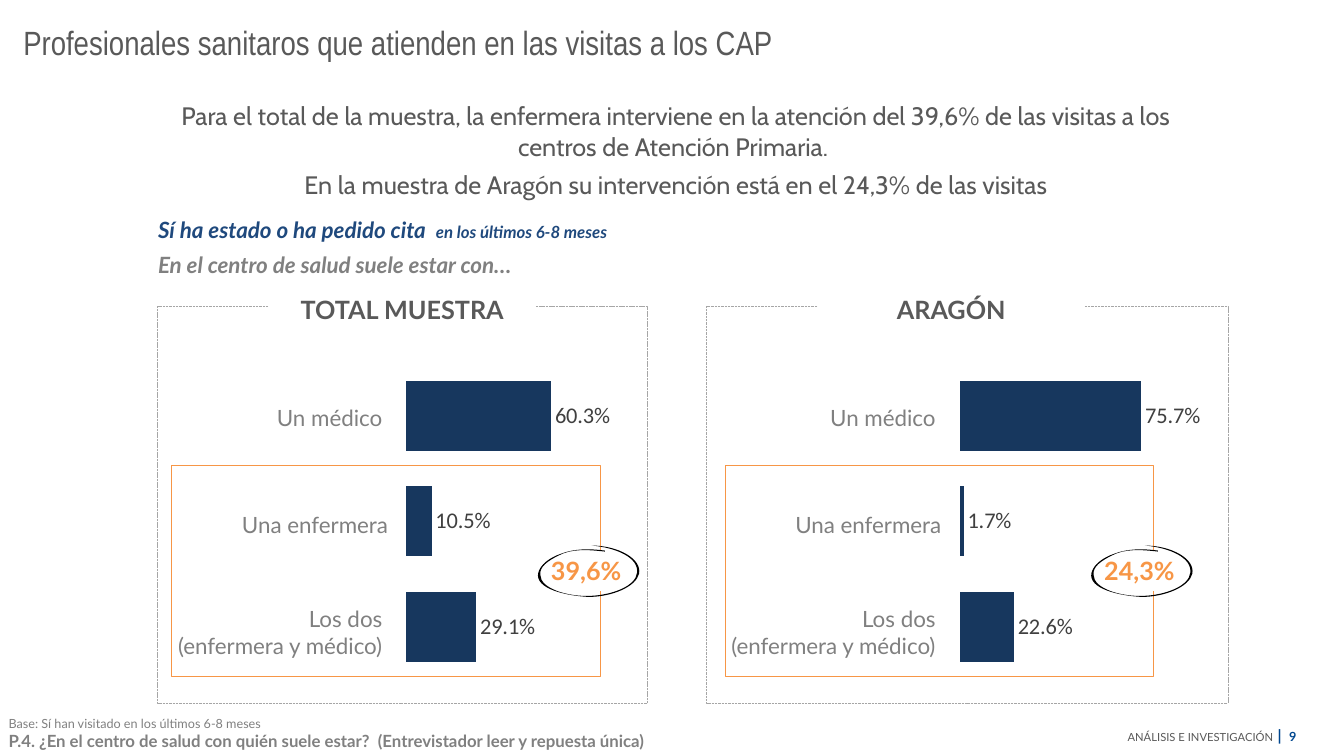
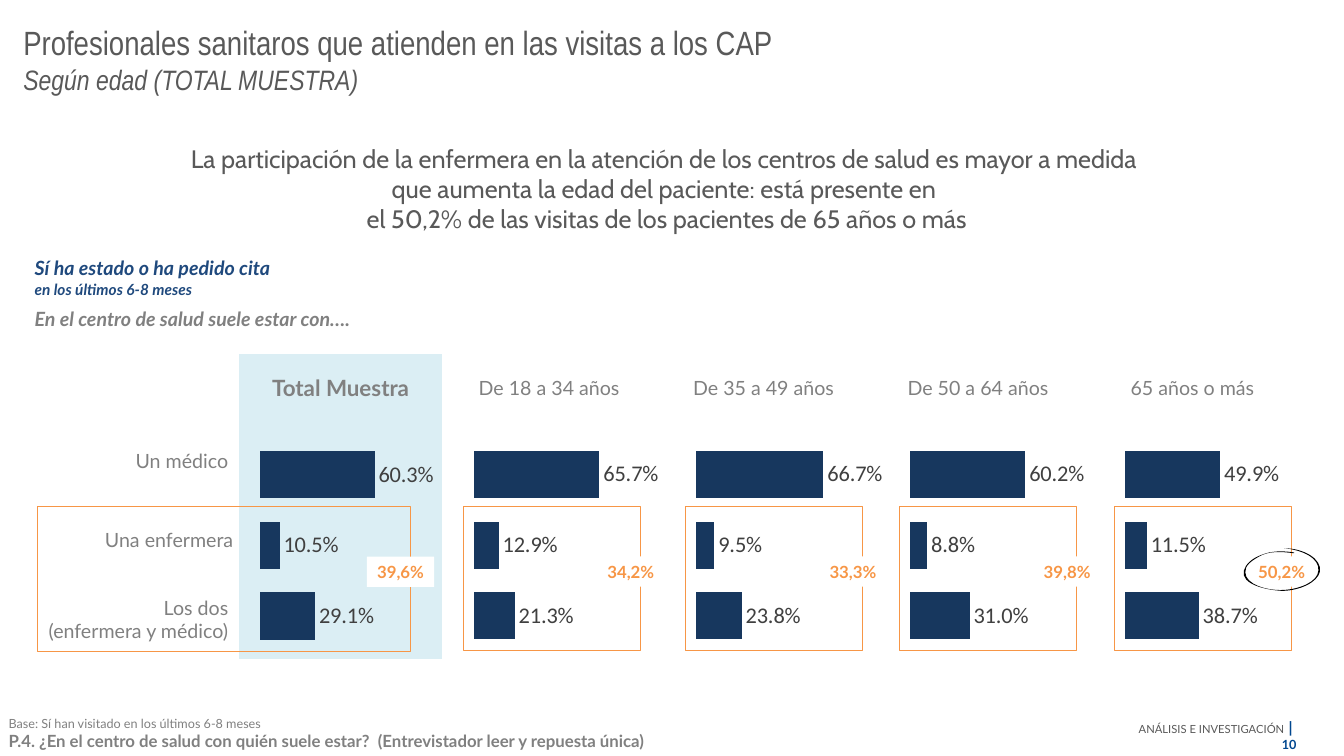
from dataclasses import dataclass, replace

from lxml import etree
from pptx import Presentation
from pptx import util as u
from pptx.chart import data as chart_data
from pptx.dml import color as dml_color
from pptx.enum import chart as chart_enum
from pptx.enum import dml, shapes, text
from pptx.oxml import ns

Pt = u.Pt
LEFT, CENTER, RIGHT = text.PP_ALIGN.LEFT, text.PP_ALIGN.CENTER, text.PP_ALIGN.RIGHT
TOP, MIDDLE, BOTTOM = text.MSO_ANCHOR.TOP, text.MSO_ANCHOR.MIDDLE, text.MSO_ANCHOR.BOTTOM


@dataclass(frozen=True)
class Style:
    """Character formatting of a run."""
    size: float
    color: str
    font: str = "Lato"
    bold: bool = False
    italic: bool = False


class Theme:
    """Colours and type styles shared by the slides."""
    white, black, bar, band = "FFFFFF", "000000", "17375E", "DBEEF4"
    accent, panel_line = "F79646", "A6A6A6"
    no_grid = "{2D5ABB26-0587-4C30-8999-92F81FD0307C}"
    title = Style(24, "595959", "Arial Narrow")
    subtitle = replace(title, size=20, italic=True)
    lead = Style(18, "595959", "Cabin")
    heading = Style(18, "595959", bold=True)
    label = Style(16, "808080")
    small_label = replace(label, size=14)
    column_total = replace(label, bold=True)
    filter = Style(16, "1F497D", bold=True, italic=True)
    question = replace(filter, color="808080")
    tag = Style(18, accent, bold=True)
    base = Style(9, "808080")
    source = Style(12, "808080", bold=True)
    department = Style(8, "595959")
    gap = replace(department, size=11)
    divider = Style(11, "00478F", bold=True)
    number = replace(divider, size=9)
    value = Style(16, "404040", "Calibri")


TITLE = "Profesionales sanitaros que atienden en las visitas a los CAP"
ROW_LABELS = ("Un médico ", "Una enfermera", "Los dos \v(enfermera y médico) ")
RING_START = (70, 6)
RING_CURVES = (
    (55, 4, 40, 4, 27, 9), (15, 13, 6, 20, 4, 28), (0, 44, 32, 51, 54, 52),
    (77, 52, 101, 42, 104, 29), (107, 14, 83, 1, 57, 1), (57, 0, 57, 1, 57, 1),
    (81, 3, 104, 13, 102, 28), (101, 41, 78, 50, 56, 51), (34, 52, 6, 44, 6, 30),
    (5, 22, 14, 16, 24, 11), (37, 4, 53, 5, 70, 7), (70, 7, 70, 6, 70, 6),
)


def rgb(value):
    """Turn a hex string into a colour."""
    return dml_color.RGBColor.from_string(value)


def points(box):
    """Convert a box in points to lengths."""
    return [Pt(length) for length in box]


def style_font(font, style):
    """Apply a style to a font."""
    font.name, font.size = style.font, Pt(style.size)
    font.bold, font.italic = style.bold, style.italic
    font.color.rgb = rgb(style.color)


def write(frame, paragraphs, align=LEFT, anchor=TOP, after=0, insets=(7.2, 3.6, 7.2, 3.6)):
    """Fill a text frame with paragraphs made of (text, style) pieces."""
    frame.word_wrap = True
    frame.auto_size = text.MSO_AUTO_SIZE.NONE
    frame.vertical_anchor = anchor
    frame.margin_left, frame.margin_top, frame.margin_right, frame.margin_bottom = points(insets)
    for index, pieces in enumerate(paragraphs):
        paragraph = frame.add_paragraph() if index else frame.paragraphs[0]
        fill_paragraph(paragraph, pieces)
        paragraph.alignment = align
        paragraph.space_after = Pt(after)


def fill_paragraph(paragraph, pieces):
    """Add styled runs, turning vertical tabs into line breaks."""
    for words, style in pieces:
        for index, line in enumerate(words.split("\v")):
            if index:
                paragraph.add_line_break()
                etree.SubElement(paragraph._p[-1], ns.qn("a:rPr"), sz=str(style.size * 100))
            if line:
                run = paragraph.add_run()
                run.text = line
                style_font(run.font, style)


def add_box(slide, box, fill=None, line=None, width=0.5, dash=None):
    """Draw a rectangle with an optional fill and outline."""
    shape = slide.shapes.add_shape(shapes.MSO_SHAPE.RECTANGLE, *points(box))
    shape.shadow.inherit = False
    paint(shape.fill, fill)
    if line:
        shape.line.color.rgb = rgb(line)
        shape.line.width = Pt(width)
        shape.line.dash_style = dash
    else:
        shape.line.fill.background()
    return shape


def paint(fill, color):
    """Set a solid fill, or none."""
    if color:
        fill.solid()
        fill.fore_color.rgb = rgb(color)
    else:
        fill.background()


def add_block(slide, box, paragraphs, **layout):
    """Place text on a white rectangle."""
    write(add_box(slide, box, Theme.white).text_frame, paragraphs, **layout)


def add_text(slide, box, paragraphs, **layout):
    """Place a text box."""
    write(slide.shapes.add_textbox(*points(box)).text_frame, paragraphs, **layout)


def add_ring(slide, box):
    """Draw a hand-made ring of cubic curves that fills the box."""
    left, top, width, height = box

    def place(x, y):
        return Pt(left + x * width / 106), Pt(top + y * height / 52)

    builder = slide.shapes.build_freeform(*place(*RING_START))
    builder.add_line_segments([place(*curve[4:]) for curve in RING_CURVES], close=True)
    shape = builder.convert_to_shape()
    for line, curve in zip(list(shape.element.iter(ns.qn("a:lnTo"))), RING_CURVES):
        line.tag = ns.qn("a:cubicBezTo")
        for index in (0, 2):
            x, y = place(*curve[index:index + 2])
            control = etree.Element(ns.qn("a:pt"), x=str(x - shape.left), y=str(y - shape.top))
            line.insert(index // 2, control)
    shape.shadow.inherit = False
    paint(shape.fill, Theme.black)
    shape.line.fill.background()


def add_table(slide, box, widths, heights):
    """Add a table without style or grid."""
    graphic = slide.shapes.add_table(len(heights), len(widths), *points(box))
    for style_id in graphic.element.iter(ns.qn("a:tableStyleId")):
        style_id.text = Theme.no_grid
    table = graphic.table
    table.first_row = table.horz_banding = False
    for column, width in zip(table.columns, widths):
        column.width = Pt(width)
    for row, height in zip(table.rows, heights):
        row.height = Pt(height)
    for cell in table.iter_cells():
        paint(cell.fill, None)
    return table


def write_cell(cell, words, style, align, right=0.7):
    """Write one table cell, centred vertically."""
    cell.margin_left, cell.margin_top, cell.margin_right, cell.margin_bottom = points((0.7, 0.7, right, 0))
    cell.vertical_anchor = MIDDLE
    paragraph = cell.text_frame.paragraphs[0]
    fill_paragraph(paragraph, [(words, style)])
    paragraph.alignment = align


def add_bars(slide, box, values, plot_width, plot_height):
    """Add a bar chart whose plot covers the given fractions of the box."""
    data = chart_data.CategoryChartData()
    data.categories = ["1", "2", "3"]
    data.add_series("Series 1", values)
    chart = slide.shapes.add_chart(chart_enum.XL_CHART_TYPE.BAR_CLUSTERED, *points(box), data).chart
    chart.has_legend = chart.has_title = False
    style_font(chart.font, replace(Theme.value, size=11))
    chart.category_axis.reverse_order = True
    chart.value_axis.minimum_scale, chart.value_axis.maximum_scale = 0, 100
    chart.value_axis.has_major_gridlines = False
    chart.category_axis.visible = chart.value_axis.visible = False
    plot = chart.plots[0]
    plot.gap_width, plot.vary_by_categories = 50, False
    paint(plot.series[0].format.fill, Theme.bar)
    plot.has_data_labels = True
    labels = plot.data_labels
    labels.show_value = True
    labels.number_format, labels.number_format_is_linked = "0.0\\%", False
    labels.position = chart_enum.XL_LABEL_POSITION.OUTSIDE_END
    style_font(labels.font, Theme.value)
    set_plot_layout(chart, plot_width, plot_height)


def set_plot_layout(chart, width, height):
    """Fix the inner plot area of a chart."""
    area = chart._chartSpace.find(".//" + ns.qn("c:plotArea"))
    for old in area.findall(ns.qn("c:layout")):
        area.remove(old)
    layout = etree.Element(ns.qn("c:layout"))
    manual = etree.SubElement(layout, ns.qn("c:manualLayout"))
    settings = (("layoutTarget", "inner"), ("xMode", "edge"), ("yMode", "edge"),
                ("x", 0.001), ("y", 0.004), ("w", width), ("h", height))
    for tag, value in settings:
        etree.SubElement(manual, ns.qn("c:" + tag), val=str(value))
    area.insert(0, layout)


def add_base(presentation, number, title_pieces, title_height):
    """Start a slide with its title, source note and footer."""
    slide = presentation.slides.add_slide(presentation.slide_layouts[5])
    title = slide.shapes.title
    title.left, title.top, title.width, title.height = points((9.4, 12.2, 822, title_height))
    write(title.text_frame, [title_pieces])
    add_text(slide, (0, 508, 662, 31.7), [
        [("Base: Sí han visitado en los últimos 6-8 meses", Theme.base)],
        [("P.4. ¿En el centro de salud con quién suele estar?  (Entrevistador leer y repuesta única)",
          Theme.source)],
    ], anchor=BOTTOM, insets=(6.2, 3.1, 6.2, 3.1))
    add_text(slide, (795.6, 514.8, 137.5, 20.9), [[
        ("ANÁLISIS E INVESTIGACIÓN", Theme.department), (" ", Theme.gap),
        ("|  ", Theme.divider), (str(number), Theme.number),
    ]], align=RIGHT, anchor=MIDDLE)
    return slide


def add_panel(slide, box, labels_left, heading, values, nurse_share):
    """Draw a dashed panel with row labels, bars and the nurse share."""
    left, top, _, _ = box
    add_box(slide, box, line=Theme.panel_line, width=0.25, dash=dml.MSO_LINE.SQUARE_DOT)
    add_block(slide, (left + 79.3, top - 16.8, 191, 38), [[(heading, Theme.heading)]],
              align=CENTER, anchor=MIDDLE, after=6)
    table = add_table(slide, (labels_left, top + 41, 193, 229.5), [193], [76.5] * 3)
    for row, label in enumerate(ROW_LABELS):
        write_cell(table.cell(row, 0), label, Theme.label, RIGHT)
    add_bars(slide, (labels_left + 205.1, top + 39.8, 236.9, 231.8), values, 0.724, 0.973)
    add_box(slide, (labels_left + 37.8, top + 113.6, 306, 150.5), line=Theme.accent)
    add_block(slide, (labels_left + 298.5, top + 174, 70.5, 29), [[(nurse_share, Theme.tag)]], align=CENTER)
    add_ring(slide, (labels_left + 296.7, top + 170, 76.3, 37.4))


def add_age_table(slide, box):
    """Lay out the age columns and row labels with the total shaded."""
    headings = ("Total Muestra", "De 18 a 34 años", "De 35 a 49 años", "De 50 a 64 años", "65 años o más")
    table = add_table(slide, box, [161.3, 144.7] + [153.2] * 4, [47.5] + [56.7] * 3)
    for row in range(4):
        paint(table.cell(row, 1).fill, Theme.band)
    for column, heading in enumerate(headings, 1):
        style = Theme.column_total if column == 1 else Theme.small_label
        write_cell(table.cell(0, column), heading, style, CENTER)
    for row, label in enumerate(ROW_LABELS, 1):
        write_cell(table.cell(row, 0), label, Theme.small_label, RIGHT, 4.3)


def add_age_group(slide, box, chart_left, values, nurse_share):
    """Draw one group's bars, frame and nurse share."""
    left, top, width, _ = box
    add_bars(slide, (chart_left, top - 48.6, 232.6, 151.9), values, 0.586, 0.996)
    add_box(slide, box, line=Theme.accent)
    add_block(slide, (left + width - 31, top + 35.6, 48.2, 21.6),
              [[(nurse_share, replace(Theme.tag, size=12))]], align=CENTER)


def build_sample_slide(presentation):
    """Compare the whole sample with Aragón."""
    slide = add_base(presentation, 9, [(TITLE, Theme.title)], 36)
    add_block(slide, (105.8, 151, 420, 52), [
        [("Sí ha estado o ha pedido cita  ", Theme.filter),
         ("en los últimos 6-8 meses", replace(Theme.filter, size=12))],
        [("En el centro de salud suele estar con…", Theme.question)],
    ], after=6)
    add_block(slide, (101.5, 68.4, 762.5, 77.8), [
        [("Para el total de la muestra, la enfermera interviene en la atención del 39,6% "
          "de las visitas a los centros de Atención Primaria. ", Theme.lead)],
        [("En la muestra de Aragón su intervención está en el 24,3% de las visitas", Theme.lead)],
    ], align=CENTER, anchor=MIDDLE, after=6)
    add_panel(slide, (112.5, 219, 350, 283.5), 84.9, "TOTAL MUESTRA", (60.3, 10.5, 29.1), "39,6%")
    add_panel(slide, (504.7, 219, 372.3, 283.5), 480.1, "ARAGÓN", (75.7, 1.7, 22.6), "24,3%")


def build_age_slide(presentation):
    """Show the results by age group."""
    slide = add_base(presentation, 10, [
        (TITLE + "\v", Theme.title), ("Según edad (TOTAL MUESTRA)", Theme.subtitle)], 85)
    add_age_table(slide, (9.7, 252.9, 918.8, 217.6))
    add_block(slide, (17.6, 179.5, 507.6, 60.5), [
        [("Sí ha estado o ha pedido cita \v", replace(Theme.filter, size=14)),
         ("en los últimos 6-8 meses", replace(Theme.filter, size=11))],
        [("En el centro de salud suele estar con….", replace(Theme.question, size=14))],
    ], after=6)
    add_age_group(slide, (26.6, 362, 266.4, 103), 185.2, (60.3, 10.5, 29.1), "39,6%")
    groups = (
        (330.8, (65.7, 12.9, 21.3), "34,2%"),
        (489.5, (66.7, 9.5, 23.8), "33,3%"),
        (642.5, (60.2, 8.8, 31.0), "39,8%"),
        (795.7, (49.9, 11.5, 38.7), "50,2%"),
    )
    for left, values, nurse_share in groups:
        add_age_group(slide, (left, 361.8, 126.7, 103), left + 7.6, values, nurse_share)
    add_ring(slide, (886.3, 391, 57.6, 31))
    add_block(slide, (113.8, 99.4, 720.7, 70.6), [
        [("La participación de la enfermera en la atención de los centros de salud es mayor a medida "
          "que aumenta la edad del paciente: está presente en\v"
          " el 50,2% de las visitas de los pacientes de 65 años o más", Theme.lead)],
    ], align=CENTER, anchor=MIDDLE, after=6)


def main():
    """Build and save the presentation."""
    presentation = Presentation()
    presentation.slide_width, presentation.slide_height = Pt(960), Pt(540)
    build_sample_slide(presentation)
    build_age_slide(presentation)
    presentation.save("out.pptx")


if __name__ == "__main__":
    main()
